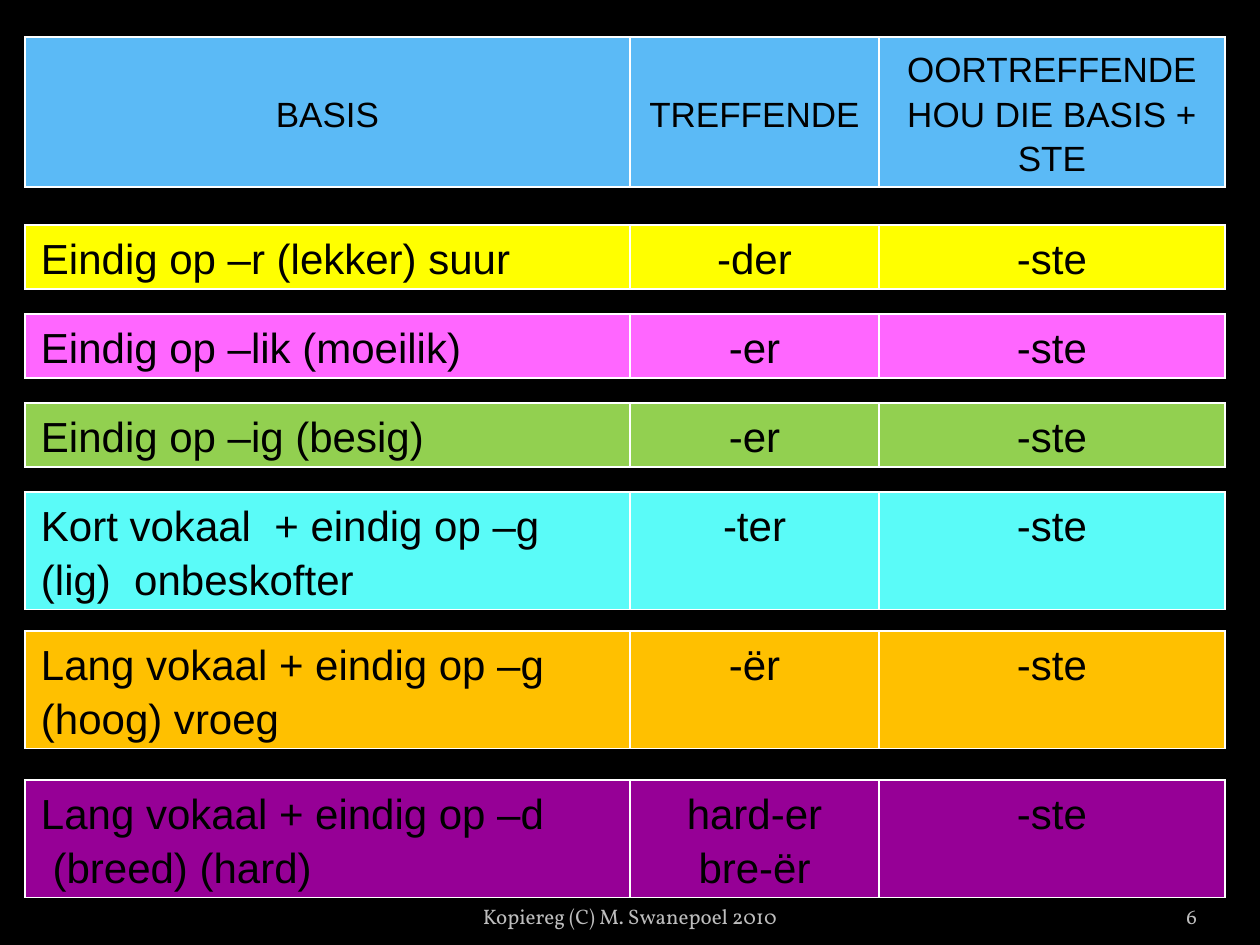
from lxml import etree
from pptx import Presentation
from pptx.dml.color import RGBColor
from pptx.enum.text import MSO_ANCHOR, PP_ALIGN
from pptx.oxml.ns import qn
from pptx.util import Pt

LEFT, MID, RIGHT = PP_ALIGN.LEFT, PP_ALIGN.CENTER, PP_ALIGN.RIGHT
TOP, CENTER, BOTTOM = MSO_ANCHOR.TOP, MSO_ANCHOR.MIDDLE, MSO_ANCHOR.BOTTOM
BLACK = RGBColor(0, 0, 0)
WHITE = RGBColor(255, 255, 255)
GRAY = RGBColor(0xBD, 0xBD, 0xBD)
BLUE = RGBColor(0x5B, 0xBA, 0xF6)
YELLOW = RGBColor(0xFF, 0xFF, 0x00)
PINK = RGBColor(0xFF, 0x66, 0xFF)
GREEN = RGBColor(0x92, 0xD0, 0x50)
CYAN = RGBColor(0x5A, 0xFB, 0xF8)
ORANGE = RGBColor(0xFF, 0xC0, 0x00)
PURPLE = RGBColor(0xFF, 0x00, 0xFF)
EDGE, WIDE = 25, 1200
COLS = (605, 249, 346)
HEAD = ("BASIS", "TREFFENDE", "OORTREFFENDE HOU DIE BASIS + STE")
RULES = (
    (225, 63, YELLOW, "Eindig op –r (lekker) suur", "-der"),
    (314, 63, PINK, "Eindig op –lik (moeilik)", "-er"),
    (403, 63, GREEN, "Eindig op –ig (besig)", "-er"),
    (492, 117, CYAN, "Kort vokaal  + eindig op –g (lig)  onbeskofter", "-ter"),
    (631, 117, ORANGE, "Lang vokaal + eindig op –g (hoog) vroeg", "-ër"),
    (780, 117, PURPLE, "Lang vokaal + eindig op –d\n (breed) (hard)", "hard-er\nbre-ër"),
)


def px(n):
    """Turn pixels into EMU."""
    return round(n * 914400 / 126)


def write(frame, text, size, face, color, align, space=1.0):
    """Fill a text frame, one paragraph to a line."""
    frame.text = text
    for para in frame.paragraphs:
        para.alignment = align
        para.line_spacing = space
        para.font.size = Pt(size)
        para.font.name = face
        para.font.color.rgb = color


def border(cell):
    """Draw a white line on each side of a cell."""
    props = cell._tc.get_or_add_tcPr()
    for spot, tag in enumerate(("a:lnL", "a:lnR", "a:lnT", "a:lnB")):
        line = etree.Element(qn(tag), w=str(Pt(1)))
        fill = etree.SubElement(line, qn("a:solidFill"))
        etree.SubElement(fill, qn("a:srgbClr"), val=str(WHITE))
        props.insert(spot, line)


def fade(cell, share):
    """Set the opacity of a cell's fill in percent."""
    color = cell._tc.tcPr.find(qn("a:solidFill")).find(qn("a:srgbClr"))
    etree.SubElement(color, qn("a:alpha"), val=str(share * 1000))


def band(slide, box, texts, color, size, aligns, anchor=TOP, share=100):
    """Place a one-row table in the box."""
    table = slide.shapes.add_table(1, len(COLS), *map(px, box)).table
    table.first_row = table.horz_banding = False
    for col, width in zip(table.columns, COLS):
        col.width = px(width)
    for cell, text, align in zip(table.rows[0].cells, texts, aligns):
        cell.margin_left = cell.margin_right = px(16)
        cell.margin_top = cell.margin_bottom = px(5)
        cell.vertical_anchor = anchor
        cell.fill.solid()
        cell.fill.fore_color.rgb = color
        if share < 100:
            fade(cell, share)
        border(cell)
        write(cell.text_frame, text, size, "Arial", BLACK, align, 1.15)


def note(slide, box, text, align, inset):
    """Place a line of footer text in the box."""
    frame = slide.shapes.add_textbox(*map(px, box)).text_frame
    frame.word_wrap = True
    frame.vertical_anchor = BOTTOM
    frame.margin_left = frame.margin_right = px(inset)
    write(frame, text, 12, "Vollkorn", GRAY, align)


def main():
    """Build the slide and save it."""
    deck = Presentation()
    deck.slide_width, deck.slide_height = px(1260), px(945)
    slide = deck.slides.add_slide(deck.slide_layouts[6])
    slide.background.fill.solid()
    slide.background.fill.fore_color.rgb = BLACK
    band(slide, (EDGE, 37, WIDE, 150), HEAD, BLUE, 20, (MID, MID, MID), CENTER)
    for top, high, color, base, more in RULES:
        share = 59 if color == PURPLE else 100
        band(slide, (EDGE, top, WIDE, high), (base, more, "-ste"), color, 24,
             (LEFT, MID, MID), share=share)
    note(slide, (430, 885, 400, 50), "Kopiereg (C) M. Swanepoel 2010", MID, 13)
    note(slide, (1092, 885, 105, 50), "6", RIGHT, 0)
    deck.save("out.pptx")


if __name__ == "__main__":
    main()
